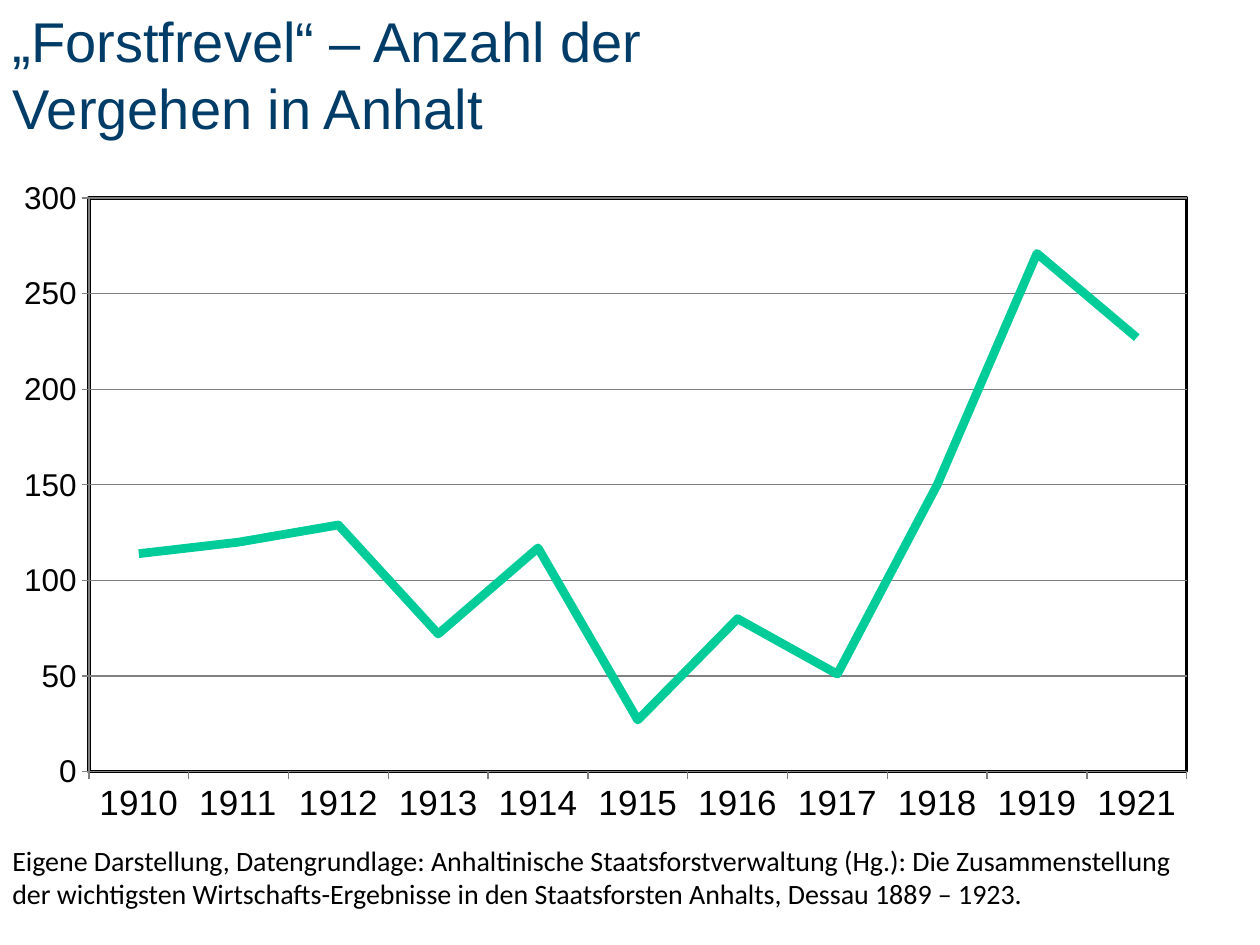
from lxml.etree import SubElement
from pptx import Presentation
from pptx.chart.data import CategoryChartData
from pptx.dml.color import RGBColor
from pptx.enum.chart import XL_CHART_TYPE, XL_MARKER_STYLE, XL_TICK_MARK
from pptx.enum.text import MSO_ANCHOR, PP_ALIGN
from pptx.oxml import parse_xml
from pptx.oxml.ns import nsdecls, qn
from pptx.util import Cm, Pt

COLORS = {"title": "003C68", "text": "000000", "line": "00CC99",
          "grid": "808080", "plot": "FFFFFF"}
OFFENCES = {"1910": 114, "1911": 120, "1912": 129, "1913": 72, "1914": 117, "1915": 27,
            "1916": 80, "1917": 51, "1918": 150, "1919": 271, "1921": 227}
SOURCE_LINES = (
    "Eigene Darstellung, Datengrundlage: Anhaltinische Staatsforstverwaltung (Hg.): Die Zusammenstellung",
    "der wichtigsten Wirtschafts-Ergebnisse in den Staatsforsten Anhalts, Dessau 1889 – 1923.",
)


def color(name):
    """Return the named palette colour."""
    return RGBColor.from_string(COLORS[name])


def style_font(font, name, size, color_name):
    """Apply typeface, size in points and colour."""
    font.name, font.size = name, Pt(size)
    font.color.rgb = color(color_name)


def fill_title(title, left, top, width, height):
    """Place and format the slide heading."""
    title.left, title.top, title.width, title.height = left, top, width, height
    frame = title.text_frame
    frame.text = "„Forstfrevel“ – Anzahl der Vergehen in Anhalt"
    frame.word_wrap = True
    frame.vertical_anchor = MSO_ANCHOR.TOP
    heading = frame.paragraphs[0]
    heading.alignment = PP_ALIGN.LEFT
    style_font(heading.runs[0].font, "Arial", 32, "title")


def format_plot_area(chart):
    """Fix the inner plot position and give it a framed fill."""
    plot_area = chart.element.find(".//" + qn("c:plotArea"))
    layout = plot_area.find(qn("c:layout"))
    if layout is None:
        layout = plot_area.makeelement(qn("c:layout"))
        plot_area.insert(0, layout)
    manual = SubElement(layout, qn("c:manualLayout"))
    settings = {"layoutTarget": "inner", "xMode": "edge", "yMode": "edge",
                "x": "0.0735", "y": "0.0455", "w": "0.907", "h": "0.858"}
    for tag, value in settings.items():
        SubElement(manual, qn("c:" + tag)).set("val", value)
    plot_area.append(parse_xml(
        f'<c:spPr {nsdecls("c", "a")}>'
        f'<a:solidFill><a:srgbClr val="{COLORS["plot"]}"/></a:solidFill>'
        f'<a:ln w="{Pt(2)}"><a:solidFill><a:srgbClr val="{COLORS["text"]}"/></a:solidFill></a:ln>'
        '</c:spPr>'))


def add_offence_chart(slide, left, top, width, height):
    """Draw the yearly offences as a line chart."""
    data = CategoryChartData()
    data.categories = list(OFFENCES)
    data.add_series("Series 1", list(OFFENCES.values()))
    chart = slide.shapes.add_chart(XL_CHART_TYPE.LINE, left, top, width, height, data).chart
    chart.has_legend = chart.has_title = False
    style_font(chart.font, "Arial", 10, "text")

    for axis, size in ((chart.category_axis, 20), (chart.value_axis, 18)):
        style_font(axis.tick_labels.font, "Arial", size, "text")
        axis.major_tick_mark = XL_TICK_MARK.OUTSIDE
        axis.minor_tick_mark = XL_TICK_MARK.NONE
        axis.format.line.color.rgb = color("grid")
        axis.format.line.width = Pt(0.75)
    values = chart.value_axis
    values.minimum_scale, values.maximum_scale, values.major_unit = 0, 300, 50
    values.has_major_gridlines = True
    gridline = values.major_gridlines.format.line
    gridline.color.rgb = color("grid")
    gridline.width = Pt(0.75)

    plot = chart.plots[0]
    plot.vary_by_categories = False
    offences = plot.series[0]
    offences.smooth = False
    offences.marker.style = XL_MARKER_STYLE.NONE
    offences.format.line.color.rgb = color("line")
    offences.format.line.width = Pt(5)
    format_plot_area(chart)


def add_source_note(slide, left, top, width, height):
    """Write the source reference below the chart."""
    frame = slide.shapes.add_textbox(left, top, width, height).text_frame
    frame.word_wrap = True
    frame.vertical_anchor = MSO_ANCHOR.MIDDLE
    frame.text = "\n".join(SOURCE_LINES)
    for line in frame.paragraphs:
        line.alignment = PP_ALIGN.JUSTIFY
        style_font(line.runs[0].font, "Calibri", 16, "text")


def main():
    """Build and save the slide."""
    presentation = Presentation()
    presentation.slide_width, presentation.slide_height = Cm(25.4), Cm(19.05)
    slide = presentation.slides.add_slide(presentation.slide_layouts[5])
    fill_title(slide.shapes.title, Cm(0), Cm(0), Cm(13.9), Cm(2.4))
    add_offence_chart(slide, Cm(0), Cm(3.38), Cm(24.4), Cm(13.48))
    add_source_note(slide, Cm(0), Cm(16.86), Cm(24.5), Cm(1.63))
    presentation.save("out.pptx")


if __name__ == "__main__":
    main()
